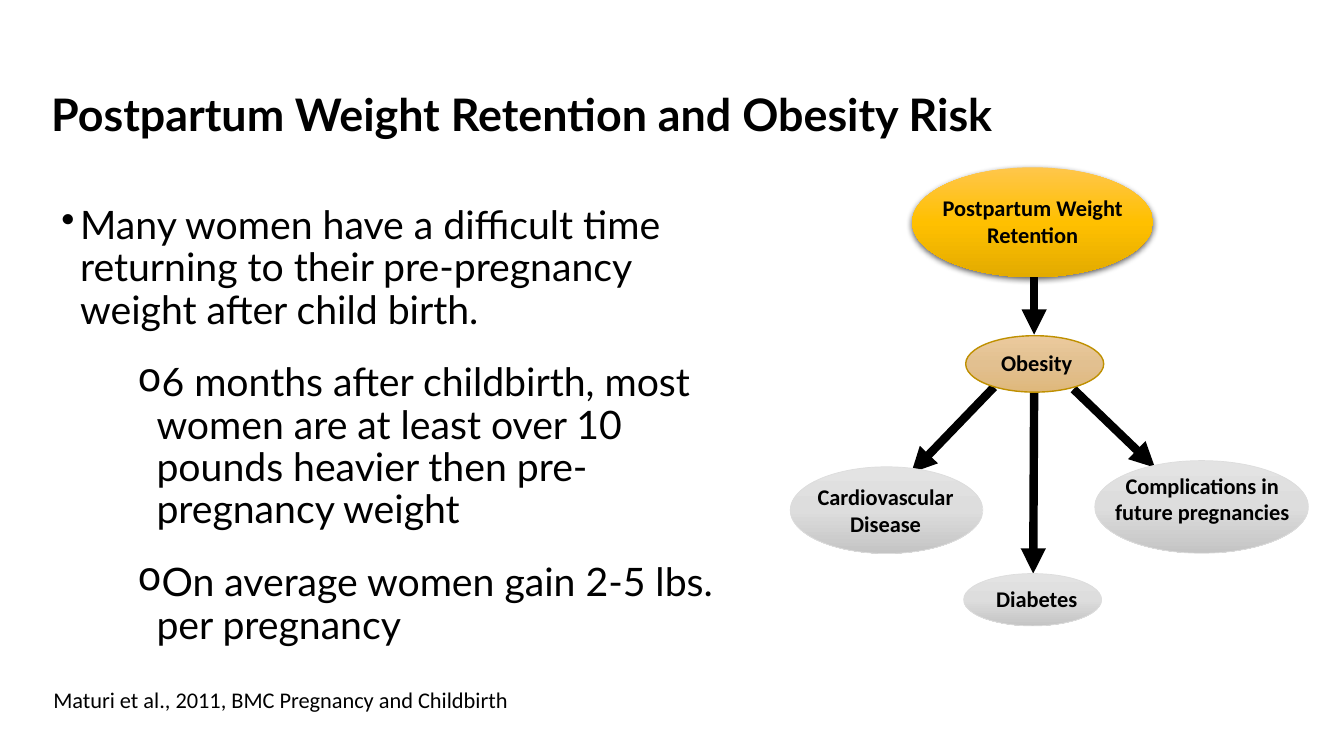
from pptx import Presentation
from pptx.dml.color import RGBColor
from pptx.enum.shapes import MSO_CONNECTOR, MSO_SHAPE
from pptx.enum.text import MSO_ANCHOR, PP_ALIGN
from pptx.oxml import parse_xml
from pptx.oxml.ns import nsdecls, qn
from pptx.util import Pt

OVAL = MSO_SHAPE.OVAL
STRAIGHT = MSO_CONNECTOR.STRAIGHT
CENTER, LEFT = PP_ALIGN.CENTER, PP_ALIGN.LEFT
TOP, BOTTOM = MSO_ANCHOR.TOP, MSO_ANCHOR.BOTTOM

BLACK = "000000"
GOLD = ("FFC64B", "FFC000", "E3AB00")
TAN = ("EBCA9D", "E2C090", "DFB87C")
GRAY = ("E3E3E3", "DDDDDD", "C4C4C4")


def color(code):
    return RGBColor.from_string(code)


def node(tag, attrs="", inner=""):
    """Make one DrawingML element."""
    return parse_xml(f'<a:{tag} {nsdecls("a")} {attrs}>{inner}</a:{tag}>')


class Board:
    """Holds the slide and its two fonts."""

    def __init__(self, slide, head, label):
        self.slide, self.head, self.label = slide, head, label

    def frame(self, box, wrap=True, anchor=TOP):
        text = self.slide.shapes.add_textbox(*map(Pt, box)).text_frame
        text.word_wrap = wrap
        text.vertical_anchor = anchor
        return text

    def style(self, para, face, size, bold=False):
        font = para.font
        font.name, font.size, font.bold = face, Pt(size), bold
        font.color.rgb = color(BLACK)

    def title(self, words, box):
        para = self.frame(box, anchor=BOTTOM).paragraphs[0]
        para.text = words
        para.line_spacing = 0.9
        self.style(para, self.head, 32, True)

    def bullets(self, items, box):
        """Write (level, words) pairs as a bulleted list."""
        text = self.frame(box)
        for i, (level, words) in enumerate(items):
            para = text.add_paragraph() if i else text.paragraphs[0]
            para.text = words
            para.level = level
            props = para._p.get_or_add_pPr()
            props.set("marL", str(Pt(68 if level else 13.5)))
            props.set("indent", str(-Pt(13.5)))
            props.append(node("buChar", f'char="{"o" if level else "•"}"'))
            para.line_spacing = 0.9
            para.space_before = Pt(3.75 if i else 0)
            para.space_after = Pt(18)
            self.style(para, self.head, 28)

    def note(self, lines, box, wrap=True, align=CENTER, bold=True):
        text = self.frame(box, wrap)
        for i, words in enumerate(lines):
            para = text.add_paragraph() if i else text.paragraphs[0]
            para.text = words
            para.alignment = align
            self.style(para, self.label, 16, bold)

    def oval(self, box, shades, edge=None, width=0.5, shadow=False):
        shape = self.slide.shapes.add_shape(OVAL, *map(Pt, box))
        shape.shadow.inherit = False
        props = shape._element.spPr
        stops = "".join(
            f'<a:gs pos="{i * 50000}"><a:srgbClr val="{shade}"/></a:gs>'
            for i, shade in enumerate(shades))
        props.find(qn("a:prstGeom")).addnext(node(
            "gradFill", 'rotWithShape="1"',
            f'<a:gsLst>{stops}</a:gsLst><a:lin ang="5400000" scaled="0"/>'))
        if edge:
            shape.line.color.rgb = color(edge)
            shape.line.width = Pt(width)
        else:
            shape.line.fill.background()
        if shadow:
            props.find(qn("a:effectLst")).append(node(
                "outerShdw",
                f'blurRad="{Pt(4.5)}" dist="{Pt(1.5)}" dir="5400000" '
                'algn="ctr" rotWithShape="0"',
                f'<a:srgbClr val="{BLACK}"><a:alpha val="63000"/></a:srgbClr>'))

    def arrow(self, *ends):
        link = self.slide.shapes.add_connector(STRAIGHT, *map(Pt, ends))
        link.line.color.rgb = color(BLACK)
        link.line.width = Pt(6)
        props = link._element.spPr
        props.find(qn("a:ln")).append(node("tailEnd", 'type="triangle"'))
        props.append(node("effectLst"))


def main():
    deck = Presentation()
    deck.slide_width, deck.slide_height = Pt(960), Pt(540)
    board = Board(deck.slides.add_slide(deck.slide_layouts[6]), "Lato", "Calibri")

    board.arrow(710, 276.5, 651, 337.7)
    board.arrow(738.7, 280, 738, 409.7)
    board.arrow(766.8, 278, 825, 334)

    board.title("Postpartum Weight Retention and Obesity Risk",
                (29.5, 0, 787.7, 104.4))
    board.bullets([
        (0, "Many women have a difficult time returning to their "
            "pre-pregnancy weight after child birth."),
        (1, "6 months after childbirth, most women are at least over 10 "
            "pounds heavier then pre-pregnancy weight"),
        (1, "On average women gain 2-5 lbs. per pregnancy"),
    ], (36.7, 143.3, 510.5, 342.7))

    board.oval((651.6, 119.5, 172, 78.5), GOLD, shadow=True)
    board.note(["Postpartum Weight Retention"], (647.3, 135.4, 180.7, 46))

    for box in ((564.5, 333.4, 137.5, 62), (688.3, 409.7, 98.6, 37.4),
                (782, 329, 152.6, 66.2)):
        board.oval(box, GRAY, "DDDDDD")
    board.note(["Complications in", "future pregnancies"],
               (785, 333.4, 147.6, 46))
    board.note(["Cardiovascular", "Disease"], (574.6, 341.3, 116, 46))
    board.note(["Diabetes"], (702, 414.7, 77, 26.6), wrap=False)

    board.arrow(738.7, 198, 738.7, 239)
    board.oval((689.8, 239.8, 98.6, 40.3), TAN, "BF9000", 1)
    board.note(["Obesity"], (705.6, 245.5, 69.8, 26.6), wrap=False)
    board.note(["Maturi et al., 2011, BMC Pregnancy and Childbirth"],
               (31, 486.7, 350.6, 26.6), wrap=False, align=LEFT, bold=False)

    deck.save("out.pptx")


if __name__ == "__main__":
    main()
